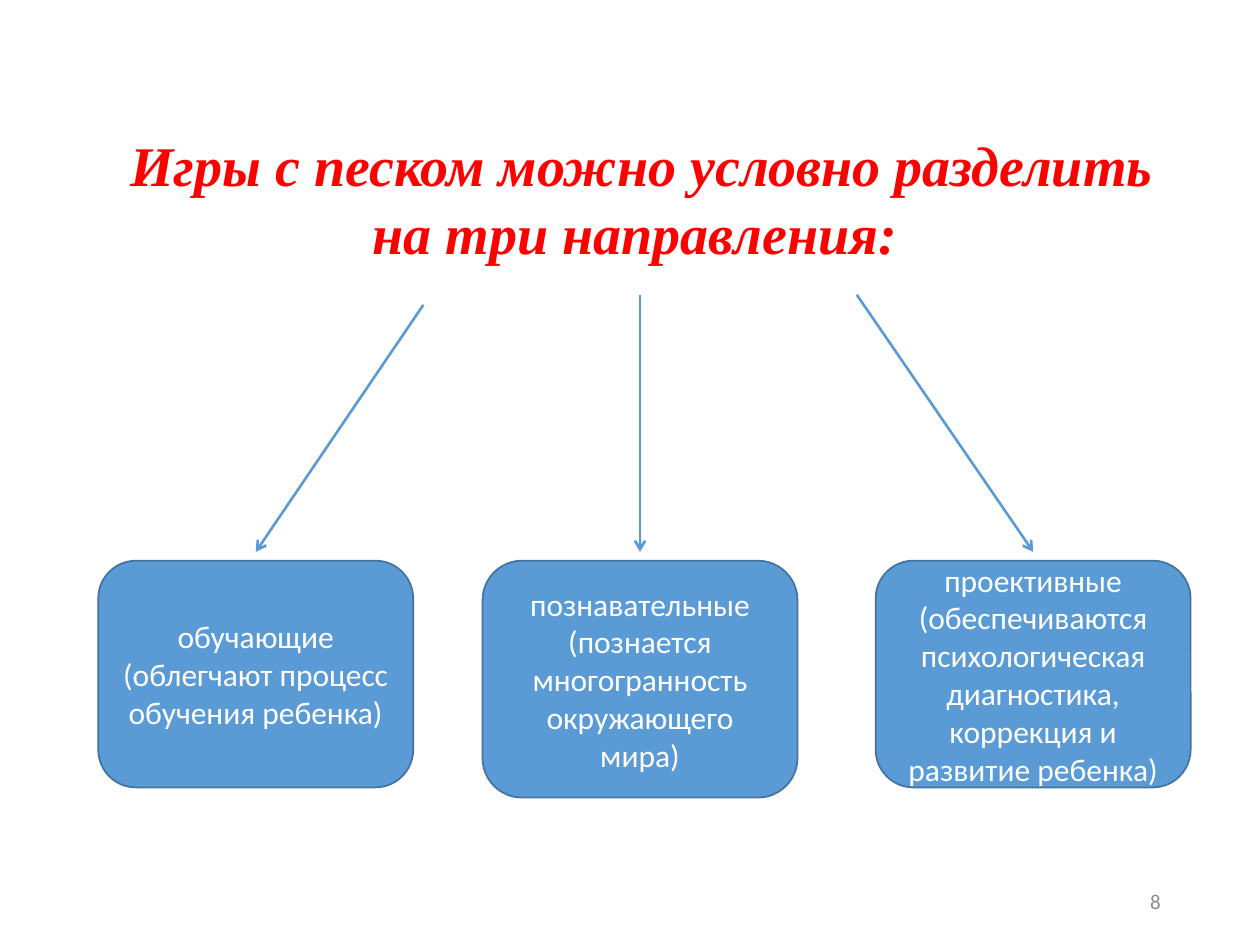
from lxml import etree
from pptx import Presentation
from pptx import util as u
from pptx.dml.color import RGBColor
from pptx.enum import shapes, text
from pptx.oxml.ns import qn

PX = 9144  # 100 px to the inch
RED = RGBColor(0xFF, 0x00, 0x00)
BLUE = RGBColor(0x5B, 0x9B, 0xD5)
DARK_BLUE = RGBColor(0x43, 0x73, 0x9E)
WHITE = RGBColor(0xFF, 0xFF, 0xFF)
GRAY = RGBColor(0x8C, 0x8C, 0x8C)


def write(holder, words, size, color, font="Calibri", align=text.PP_ALIGN.CENTER,
          anchor=text.MSO_ANCHOR.MIDDLE, bold=False, italic=False):
    frame = holder.text_frame
    frame.word_wrap = True
    frame.vertical_anchor = anchor
    paragraph = frame.paragraphs[0]
    paragraph.alignment = align
    run = paragraph.add_run()
    run.text = words
    run.font.name = font
    run.font.size = u.Pt(size)
    run.font.bold = bold
    run.font.italic = italic
    run.font.color.rgb = color


deck = Presentation()
deck.slide_width, deck.slide_height = 1000 * PX, 750 * PX
slide = deck.slides.add_slide(deck.slide_layouts[6])

page_number = slide.shapes.add_textbox(706 * PX, 695 * PX, 225 * PX, 40 * PX)
write(page_number, "8", 12, GRAY, align=text.PP_ALIGN.RIGHT)

title = slide.shapes.add_textbox(68 * PX, 99 * PX, 883 * PX, 148 * PX)
write(title, "Игры с песком можно условно разделить на три направления: ", 32, RED,
      font="Times New Roman", anchor=text.MSO_ANCHOR.TOP, bold=True, italic=True)

# left, height, words, arrow start x and y, arrow end x
directions = [
    (78, 180, "обучающие (облегчают процесс обучения ребенка)", 336, 242, 203),
    (383, 188, "познавательные (познается многогранность окружающего мира)",
     508, 234, 508),
    (695, 180, "проективные (обеспечиваются психологическая диагностика, "
     "коррекция и развитие ребенка)", 680, 234, 820),
]
for left, height, words, start_x, start_y, end_x in directions:
    direction = slide.shapes.add_shape(
        shapes.MSO_SHAPE.ROUNDED_RECTANGLE, left * PX, 445 * PX, 250 * PX, height * PX)
    direction.shadow.inherit = False
    direction.fill.solid()
    direction.fill.fore_color.rgb = BLUE
    direction.line.color.rgb = DARK_BLUE
    direction.line.width = u.Pt(1)
    write(direction, words, 18, WHITE)

    arrow = slide.shapes.add_connector(
        shapes.MSO_CONNECTOR.STRAIGHT, start_x * PX, start_y * PX, end_x * PX, 438 * PX)
    arrow.line.color.rgb = BLUE
    arrow.line.width = u.Pt(1.5)
    etree.SubElement(arrow.line._get_or_add_ln(), qn("a:tailEnd"), type="arrow")
    etree.SubElement(arrow._element.spPr, qn("a:effectLst"))

deck.save("out.pptx")
